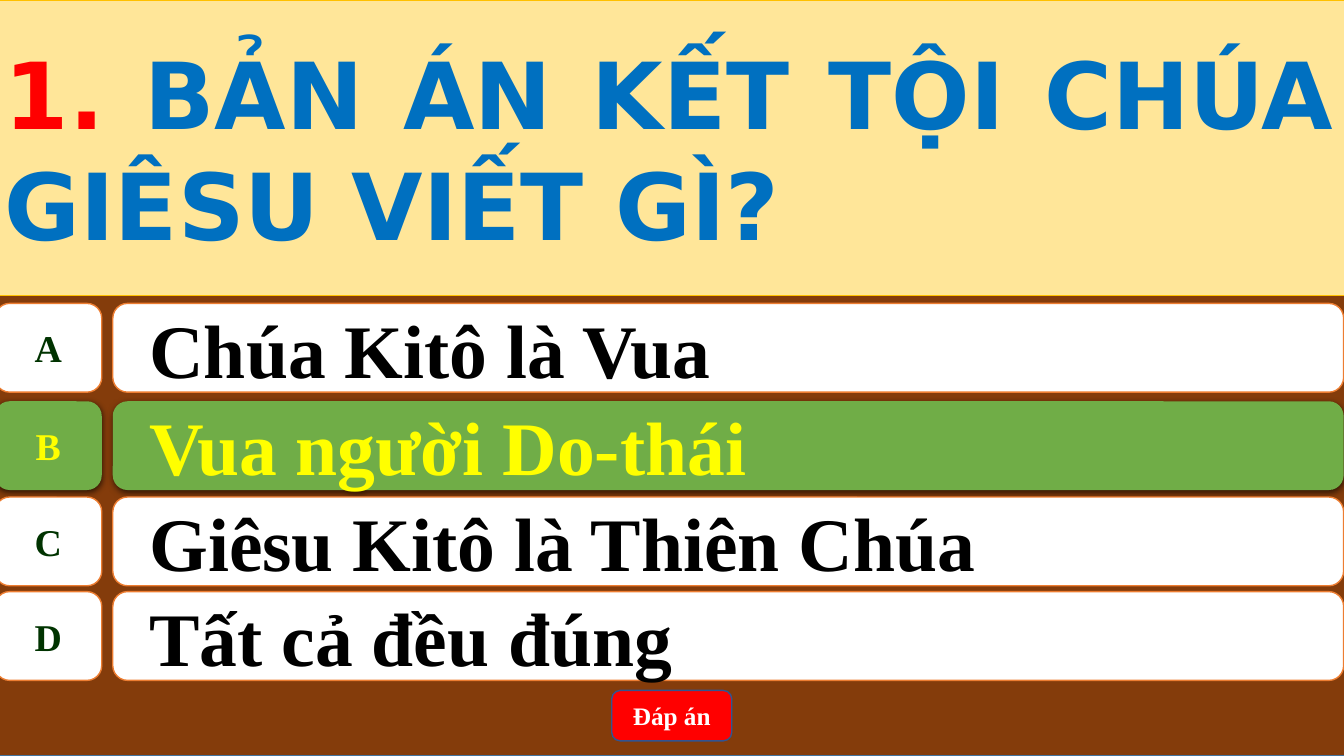
from lxml.etree import SubElement
from pptx import Presentation
from pptx.dml.color import RGBColor
from pptx.enum.shapes import MSO_SHAPE
from pptx.enum.text import MSO_ANCHOR, PP_ALIGN
from pptx.oxml.ns import qn
from pptx.util import Pt

COLORS = {
    "brown": "843C0B", "steel": "43739E", "white": "FFFFFF",
    "orange": "ED7D31", "dark_green": "003300", "black": "000000",
    "green": "70AD47", "yellow": "FFFF00", "red": "FF0000",
    "navy": "325491", "cream": "FFE699", "gold": "FFC000", "blue": "0070C0",
}
SERIF, SANS = "Times New Roman", "DejaVu Sans"
LEFT, FULL_WIDTH = -3.6, 964
ANSWER_LEFT, ANSWER_WIDTH = 80.6, 879.2
LABEL_WIDTH, ROW_HEIGHT = 76.3, 63.4

# letter, answer, top, correct
ANSWERS = [
    ("A", "Chúa Kitô là Vua", 216.7, False),
    ("B", "Vua người Do-thái", 286.6, True),
    ("C", "Giêsu Kitô là Thiên Chúa", 355, False),
    ("D", "Tất cả đều đúng", 422.6, False),
]


def rgb(name):
    return RGBColor.from_string(COLORS[name])


def add_box(shapes, kind, x, y, w, h, fill, line=None, line_width=1):
    s = shapes.add_shape(kind, Pt(x), Pt(y), Pt(w), Pt(h))
    s.shadow.inherit = False
    s.fill.solid()
    s.fill.fore_color.rgb = rgb(fill)
    if line:
        s.line.color.rgb = rgb(line)
        s.line.width = Pt(line_width)
    else:
        s.line.fill.background()
    return s


def add_drop_shadow(s):
    effects = s._element.spPr.find(qn("a:effectLst"))
    shadow = SubElement(effects, qn("a:outerShdw"), blurRad=str(Pt(4.5)),
                        dist=str(Pt(1.5)), dir="5400000", rotWithShape="0")
    color = SubElement(shadow, qn("a:srgbClr"), val=COLORS["black"])
    SubElement(color, qn("a:alpha"), val="63000")


def write(s, *runs, size, font=SERIF, align=PP_ALIGN.CENTER, wrap=True):
    """Fill the shape with one bold paragraph of (text, colour) runs."""
    tf = s.text_frame
    tf.word_wrap = wrap
    tf.vertical_anchor = MSO_ANCHOR.MIDDLE
    p = tf.paragraphs[0]
    p.alignment = align
    for text, color in runs:
        r = p.add_run()
        r.text = text
        r.font.name = font
        r.font.size = Pt(size)
        r.font.bold = True
        r.font.color.rgb = rgb(color)
    return p


def add_answer(slide, letter, answer, top, correct):
    shapes = slide.shapes.add_group_shape().shapes
    if correct:
        fill, line, letter_color, answer_color = "green", None, "yellow", "yellow"
    else:
        fill, line, letter_color, answer_color = "white", "orange", "dark_green", "black"

    label = add_box(shapes, MSO_SHAPE.FLOWCHART_ALTERNATE_PROCESS,
                    LEFT, top, LABEL_WIDTH, ROW_HEIGHT, fill, line)
    write(label, (letter, letter_color), size=27, wrap=False)

    bar = add_box(shapes, MSO_SHAPE.ROUNDED_RECTANGLE,
                  ANSWER_LEFT, top, ANSWER_WIDTH, ROW_HEIGHT, fill, line)
    p = write(bar, (answer, answer_color), size=54, align=PP_ALIGN.LEFT)
    p.level = 1
    pPr = p._p.get_or_add_pPr()
    pPr.set("marL", str(Pt(36)))
    pPr.set("indent", str(Pt(-20)))

    if correct:
        add_drop_shadow(label)
        add_drop_shadow(bar)


def main():
    prs = Presentation()
    prs.slide_width, prs.slide_height = Pt(960), Pt(540)
    slide = prs.slides.add_slide(prs.slide_layouts[6])

    add_box(slide.shapes, MSO_SHAPE.RECTANGLE,
            LEFT, 0, FULL_WIDTH, 540, "brown", "steel")
    for row in ANSWERS:
        add_answer(slide, *row)

    button = add_box(slide.shapes, MSO_SHAPE.ROUNDED_RECTANGLE,
                     437, 493.2, 85.7, 36, "red", "navy")
    write(button, ("Đáp án", "white"), size=18)

    question = add_box(slide.shapes, MSO_SHAPE.RECTANGLE,
                       LEFT, 0, FULL_WIDTH, 211, "cream", "gold", 0.5)
    write(question, ("1. ", "red"), ("BẢN ÁN KẾT TỘI CHÚA GIÊSU VIẾT GÌ?", "blue"),
          size=66, font=SANS, align=PP_ALIGN.JUSTIFY)

    prs.save("out.pptx")


if __name__ == "__main__":
    main()
